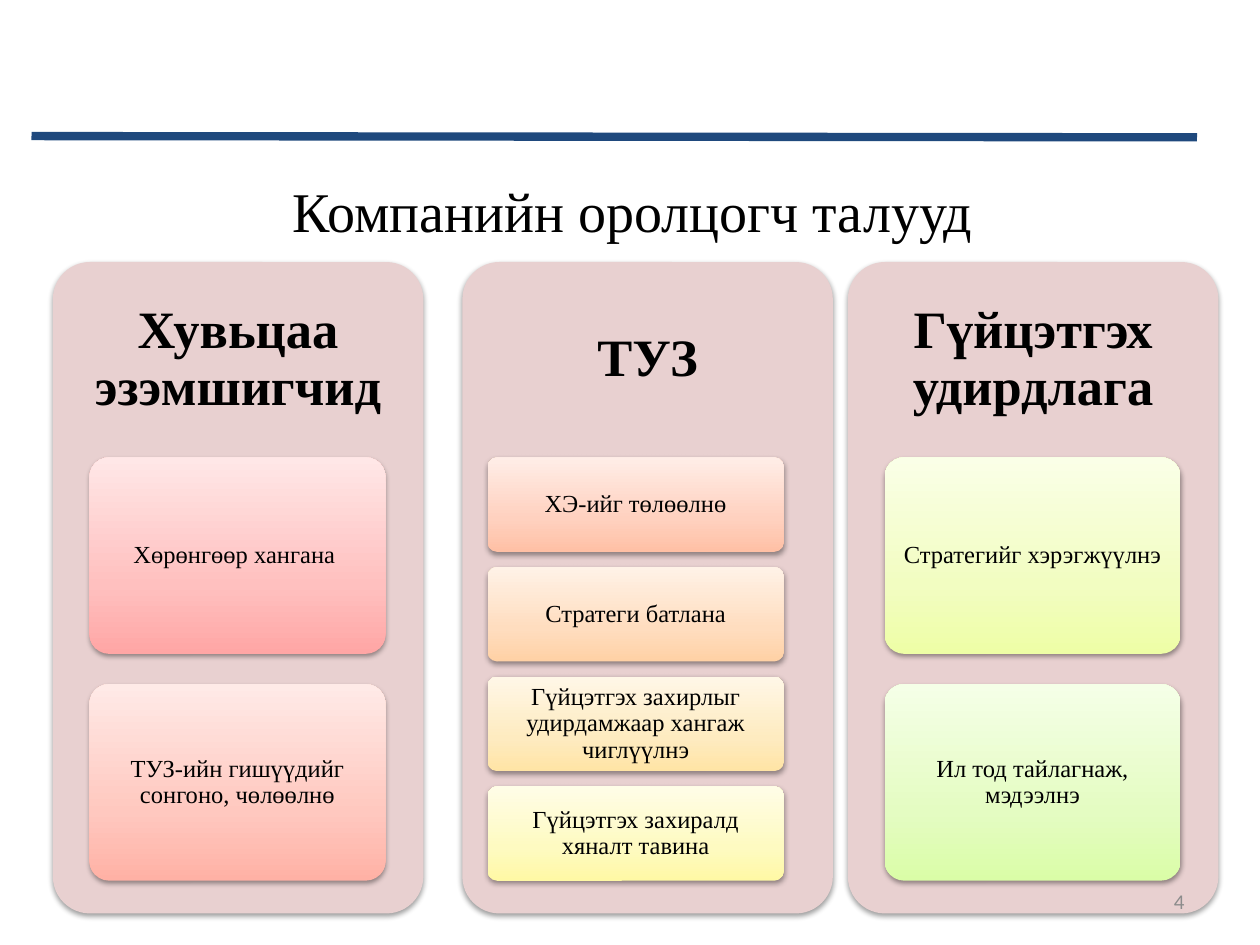
from copy import deepcopy

from lxml import etree
from pptx import Presentation
from pptx.dml.color import RGBColor
from pptx.enum.shapes import MSO_CONNECTOR, MSO_SHAPE
from pptx.enum.text import MSO_ANCHOR, PP_ALIGN
from pptx.oxml import parse_xml
from pptx.oxml.ns import nsdecls, qn
from pptx.util import Inches, Pt

ROUND_RECT = MSO_SHAPE.ROUNDED_RECTANGLE
STRAIGHT = MSO_CONNECTOR.STRAIGHT
MIDDLE = MSO_ANCHOR.MIDDLE
CENTER = PP_ALIGN.CENTER
RIGHT = PP_ALIGN.RIGHT

BLACK = RGBColor(0x00, 0x00, 0x00)
GRAY = RGBColor(0x8C, 0x8C, 0x8C)
NAVY = RGBColor(0x1F, 0x49, 0x7D)
PANEL = RGBColor(0xE8, 0xD0, 0xD0)
ROSE = (RGBColor(0xFF, 0xA6, 0xA5), RGBColor(0xFF, 0xC0, 0xBF), RGBColor(0xFF, 0xE7, 0xE7))
CORAL = (RGBColor(0xFF, 0xB1, 0xA5), RGBColor(0xFF, 0xC8, 0xBF), RGBColor(0xFF, 0xEA, 0xE7))
PEACH = (RGBColor(0xFF, 0xC0, 0xA5), RGBColor(0xFF, 0xD1, 0xBF), RGBColor(0xFF, 0xED, 0xE7))
ORANGE = (RGBColor(0xFF, 0xD1, 0xA5), RGBColor(0xFF, 0xDD, 0xBF), RGBColor(0xFF, 0xF2, 0xE7))
AMBER = (RGBColor(0xFF, 0xE4, 0xA5), RGBColor(0xFE, 0xEB, 0xC0), RGBColor(0xFF, 0xF7, 0xE7))
YELLOW = (RGBColor(0xFF, 0xF9, 0xA5), RGBColor(0xFE, 0xFA, 0xC1), RGBColor(0xFF, 0xFD, 0xE7))
LIME = (RGBColor(0xEE, 0xFE, 0xA6), RGBColor(0xF2, 0xFD, 0xC1), RGBColor(0xFA, 0xFF, 0xE7))
GREEN = (RGBColor(0xDA, 0xFD, 0xA7), RGBColor(0xE4, 0xFC, 0xC2), RGBColor(0xF5, 0xFF, 0xE7))

SHADOW = (
    f'<a:outerShdw {nsdecls("a")} blurRad="{Pt(3.1)}" dist="{Pt(1.6)}" dir="5400000" rotWithShape="0">'
    '<a:srgbClr val="000000"><a:alpha val="38000"/></a:srgbClr></a:outerShdw>'
)

prs = Presentation()
prs.slide_width = Inches(10)
prs.slide_height = Inches(7.5)
s = prs.slides.add_slide(prs.slide_layouts[6])


def write(sp, text, size, margins=(0.1, 0.05), color=BLACK, font="Times New Roman",
          align=CENTER, spacing=None, bold=False):
    tf = sp.text_frame
    tf.word_wrap = True
    tf.vertical_anchor = MIDDLE
    tf.margin_left = tf.margin_right = Inches(margins[0])
    tf.margin_top = tf.margin_bottom = Inches(margins[1])
    p = tf.paragraphs[0]
    p.alignment = align
    p.line_spacing = spacing
    r = p.add_run()
    r.text = text
    r.font.size = Pt(size)
    r.font.name = font
    r.font.bold = bold
    r.font.color.rgb = color


def add_card(left, top, width, height):
    sp = s.shapes.add_shape(ROUND_RECT, Inches(left), Inches(top), Inches(width), Inches(height))
    sp.adjustments[0] = 0.1
    sp.line.fill.background()
    sp.shadow.inherit = False
    sp._element.spPr.find(qn("a:effectLst")).append(parse_xml(SHADOW))
    return sp


rule = s.shapes.add_connector(STRAIGHT, Inches(0.25), Inches(1.08), Inches(9.5), Inches(1.09))
rule.line.color.rgb = NAVY
rule.line.width = Pt(4.75)
etree.SubElement(rule._element.spPr, qn("a:effectLst"))

title = s.shapes.add_textbox(Inches(0.83), Inches(1.33), Inches(8.5), Inches(0.67))
write(title, "Компанийн оролцогч талууд ", 32)

PANEL_TOP, PANEL_W, PANEL_H, HEAD_H = 2.08, 2.94, 5.17, 1.55
CARD_TOP, CARD_W, CARDS_H = 3.63, 2.35, 3.36

columns = [
    (0.42, 0.71, "Хувьцаа эзэмшигчид", 0.24, [
        ("Хөрөнгөөр хангана ", ROSE),
        ("ТУЗ-ийн гишүүдийг сонгоно, чөлөөлнө", CORAL),
    ]),
    (3.67, 3.87, "ТУЗ", 0.12, [
        ("ХЭ-ийг төлөөлнө", PEACH),
        ("Стратеги батлана", ORANGE),
        ("Гүйцэтгэх захирлыг удирдамжаар хангаж чиглүүлнэ", AMBER),
        ("Гүйцэтгэх захиралд хяналт тавина", YELLOW),
    ]),
    (6.73, 7.02, "Гүйцэтгэх удирдлага", 0.24, [
        ("Стратегийг хэрэгжүүлнэ", LIME),
        ("Ил тод тайлагнаж, мэдээлнэ", GREEN),
    ]),
]

for left, card_left, heading, gap, cards in columns:
    panel = add_card(left, PANEL_TOP, PANEL_W, PANEL_H)
    panel.fill.solid()
    panel.fill.fore_color.rgb = PANEL
    head = s.shapes.add_textbox(Inches(left), Inches(PANEL_TOP), Inches(PANEL_W), Inches(HEAD_H))
    write(head, heading, 30, (0.12, 0.12), spacing=0.9, bold=True)

    card_h = (CARDS_H - gap * (len(cards) - 1)) / len(cards)
    for i, (text, colors) in enumerate(cards):
        card = add_card(card_left, CARD_TOP + i * (card_h + gap), CARD_W, card_h)
        card.fill.gradient()
        card.fill.gradient_angle = 90
        stops = card._element.spPr.find(qn("a:gradFill")).find(qn("a:gsLst"))
        stops.insert(1, deepcopy(stops[0]))
        for stop, position, color in zip(card.fill.gradient_stops, (0, 0.35, 1), colors):
            stop.position = position
            stop.color.rgb = color
        write(card, text, 14, (0.04, 0.03), spacing=0.9)

number = s.shapes.add_textbox(Inches(7.17), Inches(6.95), Inches(2.33), Inches(0.4))
write(number, "4", 12, color=GRAY, font="Calibri", align=RIGHT)

prs.save("out.pptx")
